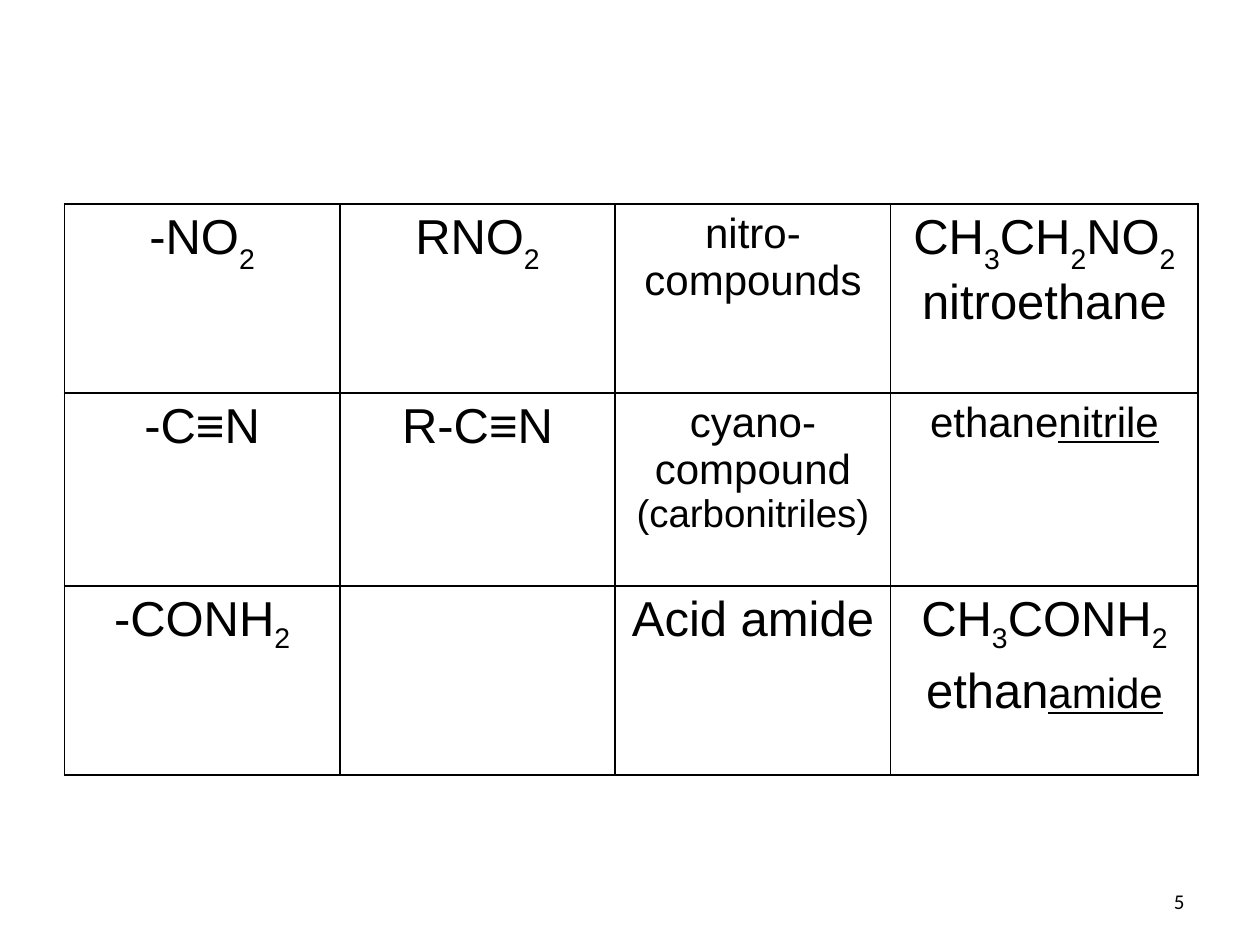
"""Build a slide with a table of nitro, cyano and amide functional groups."""
import itertools

import lxml.etree
import pptx
import pptx.dml.color
import pptx.enum.text
import pptx.oxml.ns
import pptx.util

Pt = pptx.util.Pt
ALIGN = pptx.enum.text.PP_ALIGN
ANCHOR = pptx.enum.text.MSO_ANCHOR
BLACK = "000000"


def color(value):
    return pptx.dml.color.RGBColor.from_string(value)


def add_run(paragraph, text, size, name="Arial", underline=None):
    run = paragraph.add_run()
    run.text = text
    formats = {"size": Pt(size), "name": name, "underline": underline}
    for attribute, value in formats.items():
        setattr(run.font, attribute, value)
    run.font.color.rgb = color(BLACK)
    return run


presentation = pptx.Presentation()
presentation.slide_width, presentation.slide_height = Pt(720), Pt(540)
slide = presentation.slides.add_slide(presentation.slide_layouts[6])

column_widths = [157.4, 157.4, 157.4, 175.8]
row_heights = [108, 110.2, 108]
subscript_offsets = ["-30000", "-30000", "-25000"]
group_rows = [
    [
        [[("-NO2", 28)]],
        [[("RNO2", 28)]],
        [[("nitro-compounds", 24)]],
        [[("CH3CH2NO2", 28)], [("nitroethane", 28)]],
    ],
    [
        [[("-C≡N", 28)]],
        [[("R-C≡N", 28)]],
        [[("cyano-compound", 24)], [("(carbonitriles)", 22)]],
        [[("ethane", 24), ("nitrile", 24, True)]],
    ],
    [
        [[("-CONH2", 28)]],
        [],
        [[("Acid amide", 28)]],
        [[("CH3CONH2", 28)], [("ethan", 28), ("amide", 24, True)]],
    ],
]

table_frame = slide.shapes.add_table(
    len(row_heights), len(column_widths),
    Pt(36.8), Pt(116.6), Pt(sum(column_widths)), Pt(sum(row_heights)),
)
table = table_frame.table
table.first_row = table.horz_banding = False
for column, width in zip(table.columns, column_widths):
    column.width = Pt(width)
for row, height in zip(table.rows, row_heights):
    row.height = Pt(height)

for row, group_row, offset in zip(table.rows, group_rows, subscript_offsets):
    for cell, paragraphs in zip(row.cells, group_row):
        properties = cell._tc.get_or_add_tcPr()
        for side in ("a:lnL", "a:lnR", "a:lnT", "a:lnB"):
            border = lxml.etree.SubElement(
                properties, pptx.oxml.ns.qn(side), w=str(Pt(1)))
            fill = lxml.etree.SubElement(border, pptx.oxml.ns.qn("a:solidFill"))
            lxml.etree.SubElement(fill, pptx.oxml.ns.qn("a:srgbClr"), val=BLACK)
        cell.fill.background()
        text_frame = cell.text_frame
        for index, pieces in enumerate(paragraphs):
            paragraph = text_frame.add_paragraph() if index else text_frame.paragraphs[0]
            paragraph.alignment = ALIGN.CENTER
            for text, size, *underline in pieces:
                for is_subscript, letters in itertools.groupby(text, str.isdigit):
                    run = add_run(paragraph, "".join(letters), size, "Arial", *underline)
                    if is_subscript:
                        run.font._element.set("baseline", offset)

amide_name = table.cell(2, 3).text_frame.paragraphs[1]
amide_name.space_before = Pt(5.6)

number_box = slide.shapes.add_textbox(Pt(516), Pt(500.5), Pt(168), Pt(28.8))
number_frame = number_box.text_frame
for attribute, value in {"word_wrap": True, "vertical_anchor": ANCHOR.MIDDLE}.items():
    setattr(number_frame, attribute, value)
number_paragraph = number_frame.paragraphs[0]
number_paragraph.alignment = ALIGN.RIGHT
add_run(number_paragraph, "5", 12, "Calibri")

presentation.save("out.pptx")
